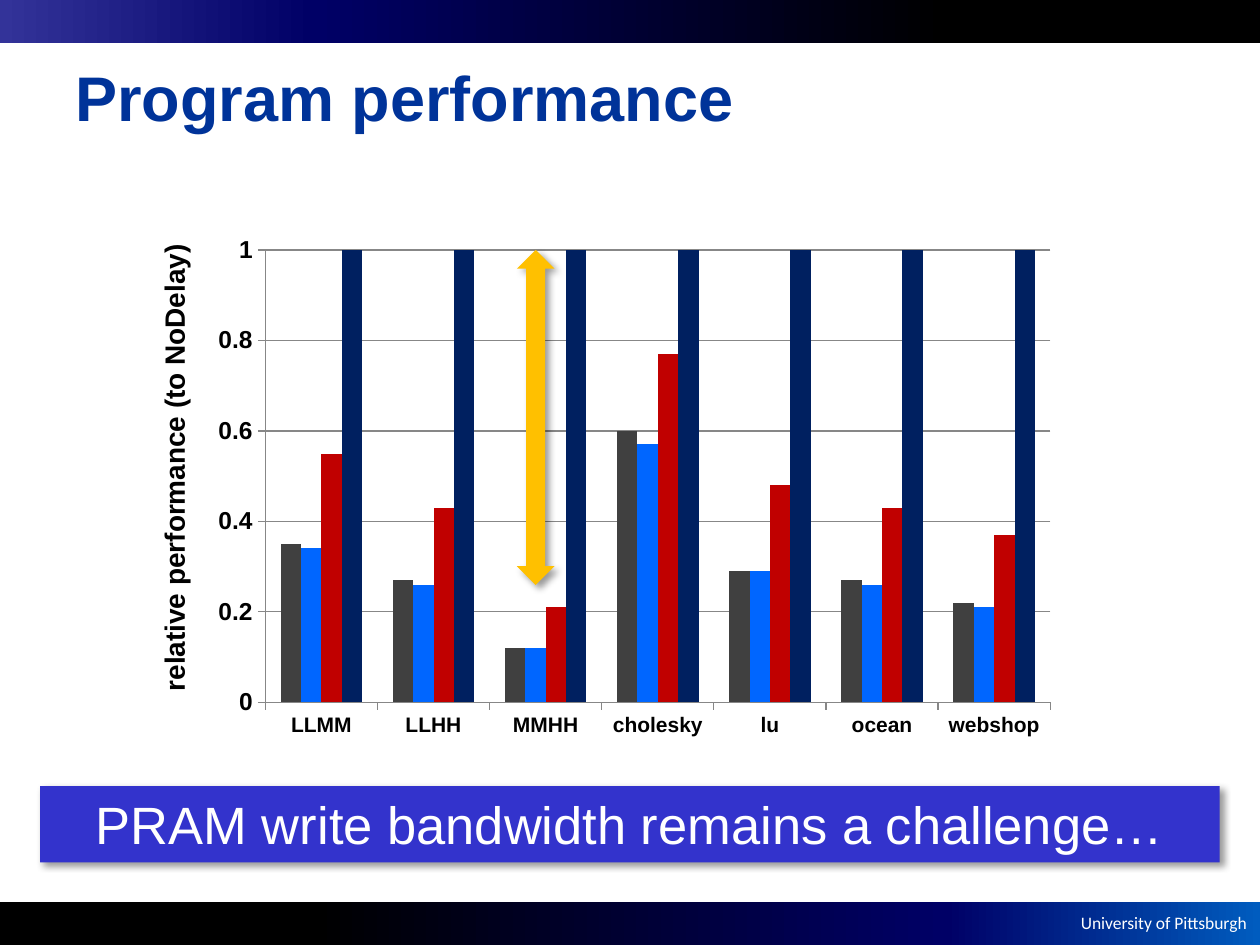
import pptx
import pptx.chart.data
import pptx.dml.color
import pptx.enum.chart
import pptx.enum.shapes
import pptx.enum.text
import pptx.oxml
import pptx.oxml.ns
import pptx.util

Pt = pptx.util.Pt
RGBColor = pptx.dml.color.RGBColor
SHAPE = pptx.enum.shapes.MSO_SHAPE
ALIGN = pptx.enum.text.PP_ALIGN
ANCHOR = pptx.enum.text.MSO_ANCHOR
nsdecls = pptx.oxml.ns.nsdecls

BLACK = RGBColor(0x00, 0x00, 0x00)
WHITE = RGBColor(0xFF, 0xFF, 0xFF)
NAVY = RGBColor(0x00, 0x00, 0x66)
INDIGO = RGBColor(0x33, 0x33, 0x99)
AZURE = RGBColor(0x00, 0x5C, 0xBF)
TITLE_BLUE = RGBColor(0x00, 0x33, 0x99)
BANNER_BLUE = RGBColor(0x33, 0x33, 0xCC)
GOLD = RGBColor(0xFF, 0xC0, 0x00)
GRID_GRAY = RGBColor(0x87, 0x87, 0x87)
BAR_GRAY = RGBColor(0x40, 0x40, 0x40)
BAR_BLUE = RGBColor(0x00, 0x66, 0xFF)
BAR_RED = RGBColor(0xC0, 0x00, 0x00)
BAR_NAVY = RGBColor(0x00, 0x20, 0x60)


def write(sp, text, size, color, font="Arial", bold=False, align=ALIGN.LEFT,
          anchor=ANCHOR.TOP, wrap=True):
    tf = sp.text_frame
    tf.word_wrap = wrap
    tf.vertical_anchor = anchor
    p = tf.paragraphs[0]
    p.alignment = align
    r = p.add_run()
    r.text = text
    r.font.name = font
    r.font.size = Pt(size)
    r.font.bold = bold
    r.font.color.rgb = color


def add_shadow(sp):
    sp.shadow.inherit = False
    effects = sp.element.spPr.find(pptx.oxml.ns.qn("a:effectLst"))
    effects.append(pptx.oxml.parse_xml(
        f'<a:outerShdw {nsdecls("a")} blurRad="{Pt(4)}" dist="{Pt(3)}" '
        'dir="2700000" algn="tl" rotWithShape="0"><a:srgbClr val="000000">'
        '<a:alpha val="40000"/></a:srgbClr></a:outerShdw>'))


prs = pptx.Presentation()
prs.slide_width = Pt(720)
prs.slide_height = Pt(540)
s = prs.slides.add_slide(prs.slide_layouts[6])

bands = [
    (515.5, (BLACK, BLACK, NAVY, AZURE)),
    (0, (INDIGO, NAVY, BLACK, BLACK)),
]
for top, colors in bands:
    sp = s.shapes.add_shape(SHAPE.RECTANGLE, 0, Pt(top), Pt(720), Pt(24.5))
    sp.shadow.inherit = False
    sp.line.fill.background()
    sp.fill.gradient()
    sp.fill.gradient_angle = 0
    stops = sp.element.spPr.find(".//" + pptx.oxml.ns.qn("a:gsLst"))
    for stop in list(stops):
        stops.remove(stop)
    for pos, color in zip((0, 25, 75, 100), colors):
        stops.append(pptx.oxml.parse_xml(
            f'<a:gs {nsdecls("a")} pos="{pos * 1000}"><a:srgbClr val="{color}"/></a:gs>'))

sp = s.shapes.add_textbox(Pt(600), Pt(517.7), Pt(119.5), Pt(19.4))
write(sp, "University of Pittsburgh", 10, WHITE, font="Calibri", align=ALIGN.RIGHT, wrap=False)

sp = s.shapes.add_textbox(Pt(36), Pt(10), Pt(648), Pt(90))
write(sp, "Program performance", 36, TITLE_BLUE, bold=True, anchor=ANCHOR.MIDDLE)

data = pptx.chart.data.CategoryChartData()
data.categories = ["LLMM", "LLHH", "MMHH", "cholesky", "lu", "ocean", "webshop"]
data.add_series("Series 1", (0.35, 0.27, 0.12, 0.6, 0.29, 0.27, 0.22))
data.add_series("Series 2", (0.34, 0.26, 0.12, 0.57, 0.29, 0.26, 0.21))
data.add_series("Series 3", (0.55, 0.43, 0.21, 0.77, 0.48, 0.43, 0.37))
data.add_series("Series 4", (1,) * 7)
chart = s.shapes.add_chart(
    pptx.enum.chart.XL_CHART_TYPE.COLUMN_CLUSTERED,
    Pt(115.5), Pt(128.9), Pt(494.6), Pt(298.1), data).chart
chart.has_legend = False
chart.has_title = False
chart.font.name = "Arial"
chart.font.size = Pt(14)
chart.font.bold = True
chart.font.color.rgb = BLACK

plot = chart.plots[0]
plot.gap_width = 150
plot.overlap = 0
plot.vary_by_categories = False
for series, color in zip(plot.series, (BAR_GRAY, BAR_BLUE, BAR_RED, BAR_NAVY)):
    series.format.fill.solid()
    series.format.fill.fore_color.rgb = color

chart.category_axis.tick_labels.font.size = Pt(12)
axis = chart.value_axis
axis.minimum_scale = 0
axis.maximum_scale = 1
axis.major_unit = 0.2
axis.has_major_gridlines = True
axis.tick_labels.number_format = "General"
axis.tick_labels.number_format_is_linked = False
for ax in (chart.category_axis, axis):
    ax.major_tick_mark = pptx.enum.chart.XL_TICK_MARK.OUTSIDE
for part in (chart.category_axis, axis, axis.major_gridlines):
    part.format.line.color.rgb = GRID_GRAY
    part.format.line.width = Pt(0.75)

area = chart.element.find(".//" + pptx.oxml.ns.qn("c:plotArea"))
for old in area.findall(pptx.oxml.ns.qn("c:layout")):
    area.remove(old)
area.insert(0, pptx.oxml.parse_xml(
    f'<c:layout {nsdecls("c")}><c:manualLayout><c:layoutTarget val="inner"/>'
    '<c:xMode val="edge"/><c:yMode val="edge"/><c:x val="0.073"/><c:y val="0.047"/>'
    '<c:w val="0.907"/><c:h val="0.867"/></c:manualLayout></c:layout>'))

sp = s.shapes.add_textbox(Pt(-37.4), Pt(252), Pt(273.6), Pt(26.6))
sp.rotation = 270
write(sp, "relative performance (to NoDelay)", 16, BLACK, bold=True, wrap=False)

arrow = s.shapes.add_shape(SHAPE.LEFT_RIGHT_ARROW, Pt(210.4), Pt(227.7), Pt(191.5), Pt(21.6))
arrow.rotation = 270
banner = s.shapes.add_shape(SHAPE.RECTANGLE, Pt(23), Pt(449.2), Pt(674), Pt(43.6))
for sp, color in ((arrow, GOLD), (banner, BANNER_BLUE)):
    sp.fill.solid()
    sp.fill.fore_color.rgb = color
    sp.line.fill.background()
    add_shadow(sp)
write(banner, "PRAM write bandwidth remains a challenge…", 30, WHITE, align=ALIGN.CENTER)

prs.save("out.pptx")
